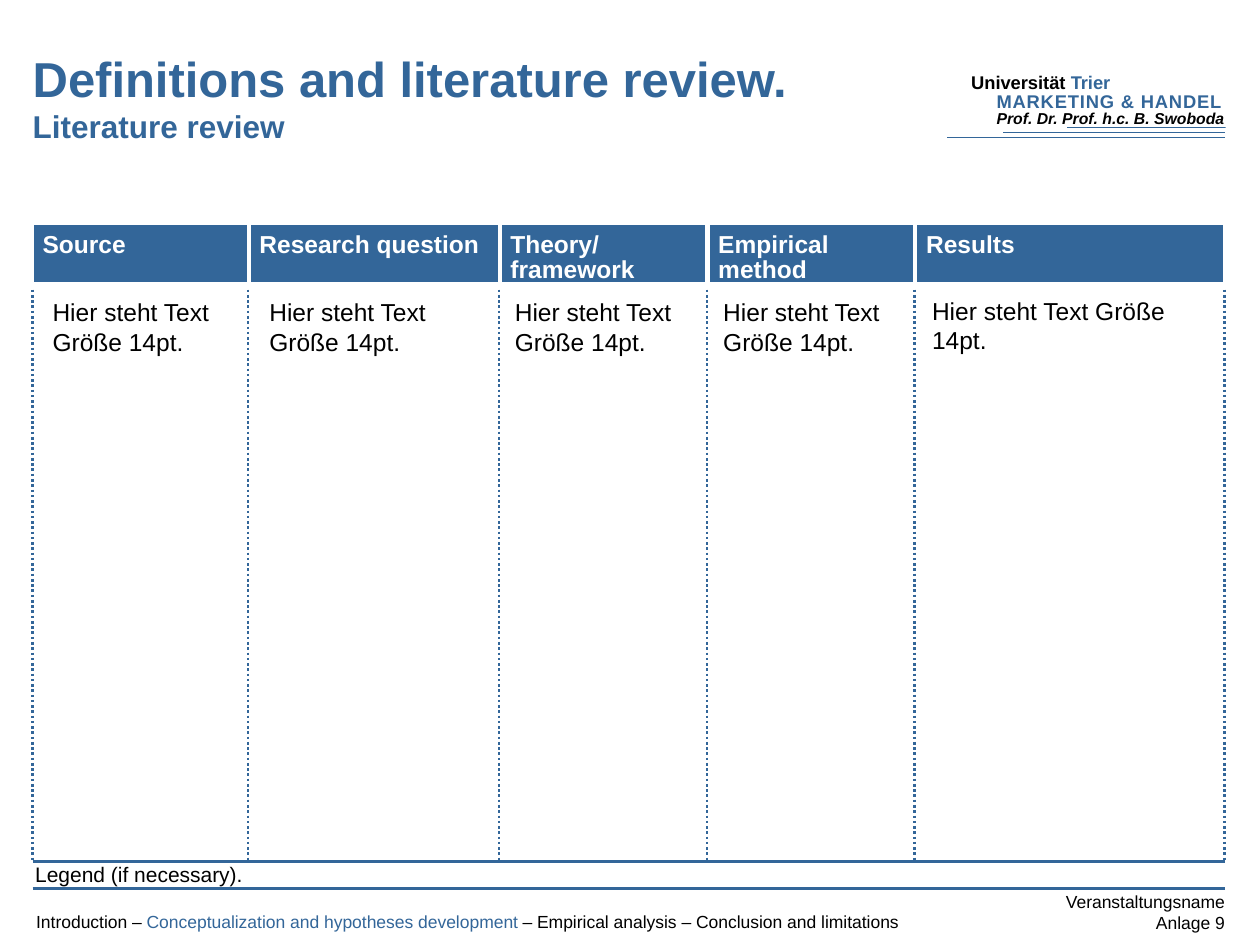
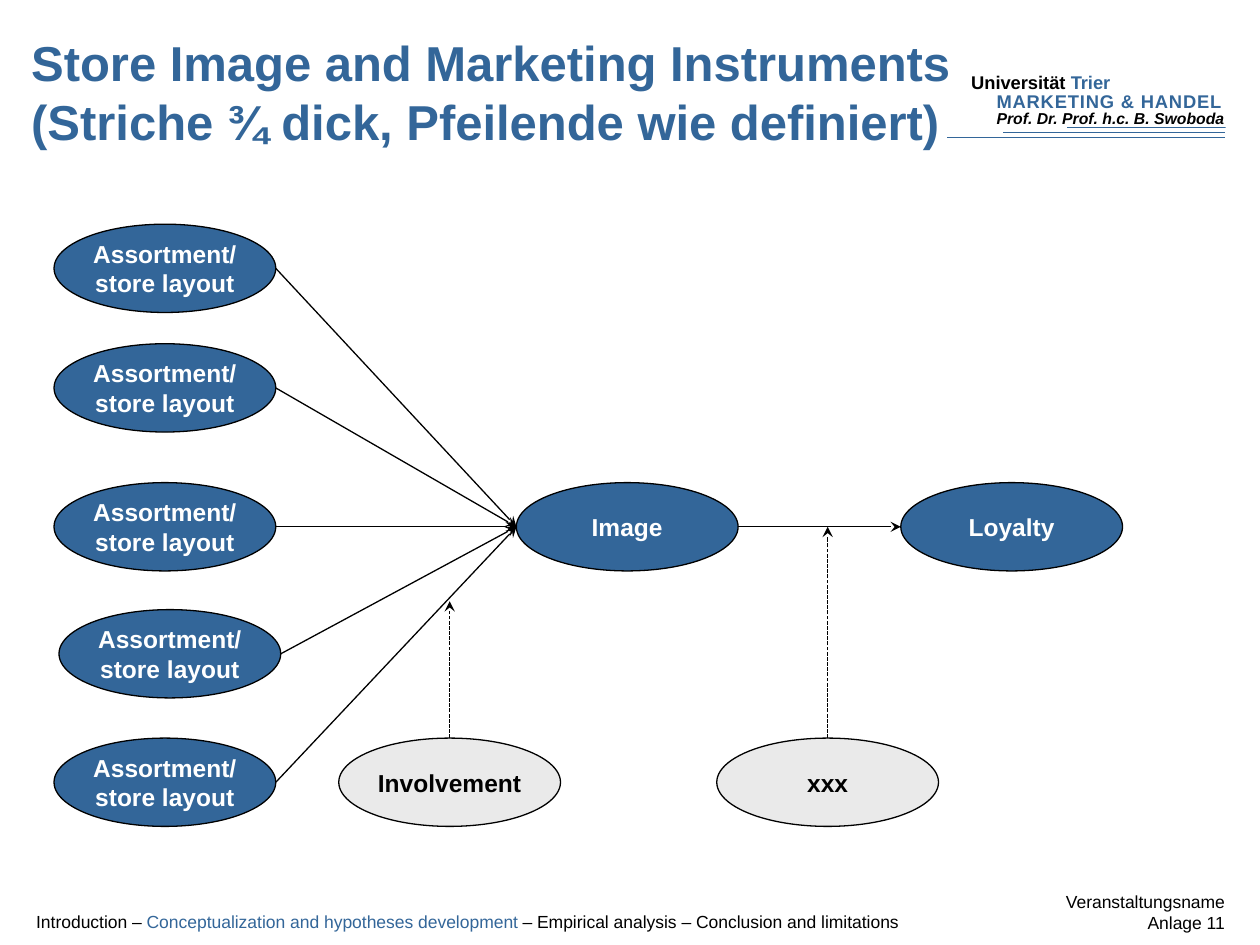
from dataclasses import dataclass
from typing import NamedTuple

from lxml.etree import SubElement
from pptx import Presentation
from pptx.dml.color import RGBColor
from pptx.enum.dml import MSO_LINE
from pptx.enum.shapes import MSO_CONNECTOR, MSO_SHAPE
from pptx.enum.text import MSO_ANCHOR, PP_ALIGN
from pptx.oxml.ns import qn
from pptx.util import Cm, Pt

BLUE, BLACK, WHITE, GREY = "336699", "000000", "FFFFFF", "EAEAEA"
FONT = "Arial"


class Run(NamedTuple):
    text: str
    size: float
    tint: str = BLACK
    bold: bool = False
    italic: bool = False
    spacing: int = 0


class Box(NamedTuple):
    left: float
    top: float
    width: float
    height: float

    def lengths(self) -> tuple:
        return tuple(Cm(side) for side in self)


class Rule(NamedTuple):
    x1: float
    y1: float
    x2: float
    y2: float
    width: float
    tint: str = BLUE
    dash: MSO_LINE | None = None
    arrow: bool = False


@dataclass
class Column:
    head: str
    left: float
    right: float
    text_left: float
    text_width: float
    text_top: float = 5.87


@dataclass
class Oval:
    label: str
    left: float
    top: float
    fill: str = BLUE
    tint: str = WHITE
    width: float = 4.47
    height: float = 1.78

    @property
    def middle(self) -> float:
        return self.top + self.height / 2

    @property
    def center(self) -> float:
        return self.left + self.width / 2

    @property
    def right(self) -> float:
        return self.left + self.width


def color(code: str) -> RGBColor:
    return RGBColor.from_string(code)


def apply(target, formats: dict) -> None:
    for name, value in formats.items():
        setattr(target, name, value)


def write(frame, lines: list[list[Run]], look: dict | None = None, **formats) -> None:
    """Fill a text frame, one list of runs for each paragraph."""
    apply(frame, {"word_wrap": True, **formats})
    for index, runs in enumerate(lines):
        para = frame.add_paragraph() if index else frame.paragraphs[0]
        apply(para, look or {})
        for item in runs:
            run = para.add_run()
            run.text = item.text
            apply(run.font, {"name": FONT, "size": Pt(item.size),
                             "bold": item.bold, "italic": item.italic})
            run.font.color.rgb = color(item.tint)
            if item.spacing:
                run.font._element.set("spc", str(item.spacing))


def add_text(slide, box: Box, lines: list[list[Run]], look: dict | None = None,
             **formats) -> None:
    frame = slide.shapes.add_textbox(*box.lengths()).text_frame
    write(frame, lines, look, **formats)


def add_form(slide, kind: MSO_SHAPE, box: Box, fill: str, edge: str, width: float):
    form = slide.shapes.add_shape(kind, *box.lengths())
    form.shadow.inherit = False
    form.fill.solid()
    form.fill.fore_color.rgb = color(fill)
    form.line.color.rgb = color(edge)
    form.line.width = Pt(width)
    return form


def add_rule(slide, rule: Rule):
    ends = (Cm(side) for side in rule[:4])
    link = slide.shapes.add_connector(MSO_CONNECTOR.STRAIGHT, *ends)
    link.line.color.rgb = color(rule.tint)
    link.line.width = Pt(rule.width)
    if rule.dash:
        link.line.dash_style = rule.dash
    if rule.arrow:
        SubElement(link.line._get_or_add_ln(), qn("a:tailEnd"), type="stealth")
    SubElement(link._element.spPr, qn("a:effectLst"))
    return link


NO_INSET = dict.fromkeys(
    ("margin_left", "margin_top", "margin_right", "margin_bottom"), 0)
RULES = [
    Rule(19.1, 2.77, 24.79, 2.77, 1),
    Rule(24.82, 2.67, 20.22, 2.67, 1),
    Rule(24.71, 2.57, 21.51, 2.57, 0.5),
]
MASKS = [Box(24.79, 2.64, 0.3, 0.53), Box(24.74, 2.59, 0.41, 0.58)]
SENDER = [
    (Box(19.33, 1.32, 5.77, 0.74),
     [Run("Universität ", 10.5, bold=True), Run("Trier", 10.5, BLUE, True)]),
    (Box(19.84, 1.7, 5.5, 0.74),
     [Run("MARKETING & HANDEL", 10.5, BLUE, True, spacing=50)]),
    (Box(19.84, 2.06, 5.5, 0.64),
     [Run("Prof. Dr. Prof. h.c. B. Swoboda", 9, bold=True, italic=True)]),
]
TRAIL = [
    Run("Introduction – ", 10),
    Run("Conceptualization and hypotheses development ", 10, BLUE),
    Run("– Empirical analysis – Conclusion and limitations", 10),
]


def start_slide(deck, title: Box, lines: list[Run], page: int):
    """Add a slide with its title, letterhead and footer."""
    slide = deck.slides.add_slide(deck.slide_layouts[6])
    for rule in RULES:
        add_rule(slide, rule)
    for mask in MASKS:
        add_form(slide, MSO_SHAPE.RECTANGLE, mask, WHITE, WHITE, 2)
    for box, runs in SENDER:
        add_text(slide, box, [runs])
    add_text(slide, title, [[line] for line in lines],
             vertical_anchor=MSO_ANCHOR.BOTTOM)
    notes = ("Veranstaltungsname", f"Anlage {page}")
    add_text(slide, Box(19.1, 17.96, 5.59, 0.86), [[Run(note, 10)] for note in notes],
             {"alignment": PP_ALIGN.RIGHT}, **NO_INSET)
    add_text(slide, Box(0.48, 18.12, 20.93, 0.92), [TRAIL],
             vertical_anchor=MSO_ANCHOR.MIDDLE)
    return slide


COLUMNS = [
    Column("Source", 0.66, 5, 0.81, 3.86),
    Column("Research question", 5.03, 10.06, 5.18, 4.29),
    Column("Theory/\nframework", 10.09, 14.25, 10.13, 3.76),
    Column("Empirical method", 14.28, 18.44, 14.33, 3.76),
    Column("Results", 18.47, 24.69, 18.54, 5.49, 5.84),
]


def build_review(deck) -> None:
    slide = start_slide(deck, Box(0.41, 0.43, 18.36, 2.62),
                        [Run("Definitions and literature review.", 28, BLUE, True),
                         Run("Literature review", 18, BLUE, True)], 9)
    inset = {"margin_left": Cm(0.2), "margin_top": Cm(0.2),
             "margin_right": Cm(0.25), "margin_bottom": Cm(0.13)}
    look = {"alignment": PP_ALIGN.LEFT, "line_spacing": Pt(14)}
    for col in COLUMNS:
        box = Box(col.left, 4.52, col.right - col.left, 1.19)
        head = add_form(slide, MSO_SHAPE.RECTANGLE, box, BLUE, WHITE, 1.5)
        lines = [[Run(line, 14, WHITE, True)] for line in col.head.split("\n")]
        write(head.text_frame, lines, look, vertical_anchor=MSO_ANCHOR.TOP, **inset)
        add_text(slide, Box(col.text_left, col.text_top, col.text_width, 1.45),
                 [[Run("Hier steht Text Größe 14pt.", 14)]])
    left, right = COLUMNS[0].left, COLUMNS[-1].right
    for x in (left, *(col.right for col in COLUMNS)):
        add_rule(slide, Rule(x, 5.84, x, 17.35, 1.5, dash=MSO_LINE.ROUND_DOT))
    for y in (17.37, 17.91):
        add_rule(slide, Rule(left, y, right, y, 1.5))
    add_text(slide, Box(0.71, 17.37, 4.32, 0.51),
             [[Run("Legend (if necessary).", 12)]], **{**NO_INSET, "word_wrap": False})


def add_oval(slide, oval: Oval):
    box = Box(oval.left, oval.top, oval.width, oval.height)
    form = add_form(slide, MSO_SHAPE.OVAL, box, oval.fill, BLACK, 0.75)
    lines = [[Run(line, 14, oval.tint, True)] for line in oval.label.split("\n")]
    write(form.text_frame, lines, {"alignment": PP_ALIGN.CENTER},
          vertical_anchor=MSO_ANCHOR.MIDDLE, word_wrap=False)
    return form


def build_model(deck) -> None:
    slide = start_slide(deck, Box(0.38, 0.53, 19.74, 2.62),
                        [Run("Store Image and Marketing Instruments", 28, BLUE, True),
                         Run("(Striche ¾ dick, Pfeilende wie definiert)", 28, BLUE, True)],
                        11)
    spots = [(1.09, 4.52), (1.09, 6.93), (1.09, 9.73), (1.19, 12.29), (1.09, 14.88)]
    drivers = [Oval("Assortment/\nstore layout", *spot) for spot in spots]
    image = Oval("Image", 10.41, 9.73)
    loyalty = Oval("Loyalty", 18.16, 9.73)
    for oval in (*drivers, image, loyalty):
        add_oval(slide, oval)
    paths = [(driver, image) for driver in drivers] + [(image, loyalty)]
    for start, end in paths:
        add_rule(slide, Rule(start.right, start.middle, end.left, end.middle,
                             0.75, BLACK, arrow=True))
    factors = [(Oval("Involvement", 6.83, 14.88, GREY, BLACK), 12.12),
               (Oval("xxx", 14.45, 14.88, GREY, BLACK), image.middle)]
    for oval, tip in factors:
        form = add_oval(slide, oval)
        link = add_rule(slide, Rule(oval.center, oval.top, oval.center, tip, 0.75,
                                    BLACK, MSO_LINE.SQUARE_DOT, True))
        link.line.dash_style = MSO_LINE.SQUARE_DOT
        link.begin_connect(form, 0)


def main() -> None:
    deck = Presentation()
    deck.slide_width, deck.slide_height = Cm(25.4), Cm(19.05)
    build_review(deck)
    build_model(deck)
    deck.save("out.pptx")


if __name__ == "__main__":
    main()
